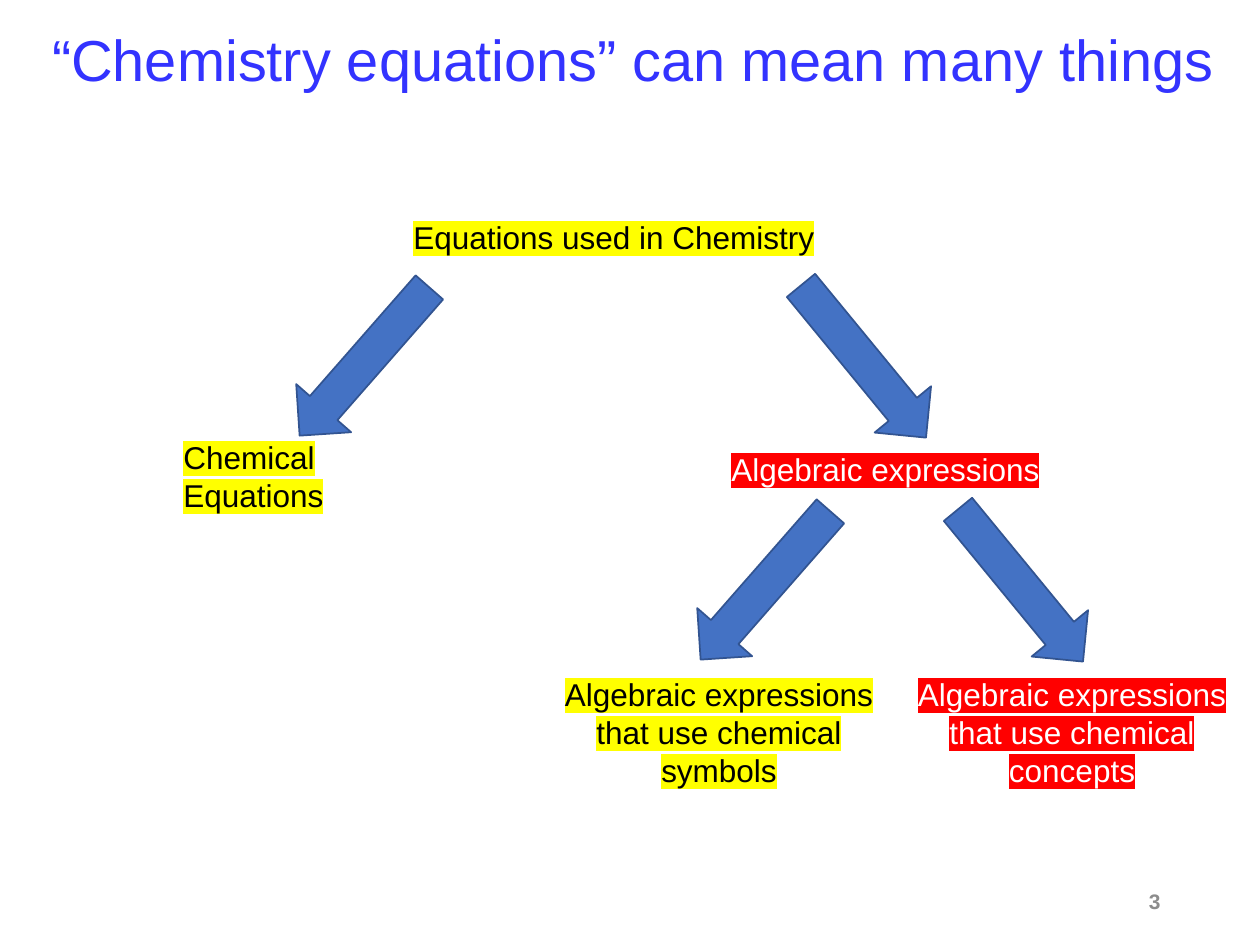
from lxml import etree
from pptx import Presentation, util as u
from pptx.dml.color import RGBColor
from pptx.enum import shapes, text
from pptx.oxml import ns

PX = 914400 / 126
COLORS = {
    "title": "3333FF", "black": "000000", "white": "FFFFFF", "yellow": "FFFF00",
    "red": "FF0000", "arrow": "4472C4", "outline": "325491", "number": "8C8C8C",
}
LEFT, CENTER, RIGHT = text.PP_ALIGN.LEFT, text.PP_ALIGN.CENTER, text.PP_ALIGN.RIGHT


def emu(*lengths):
    return [u.Emu(round(length * PX)) for length in lengths]


def add_text(box, words, size, color, align=LEFT, highlight=None):
    """Add a wrapped one-paragraph text box, with an optional highlight colour."""
    shape = slide.shapes.add_textbox(*emu(*box))
    shape.text_frame.word_wrap = True
    paragraph = shape.text_frame.paragraphs[0]
    paragraph.text = words
    paragraph.alignment = align
    font = paragraph.runs[0].font
    font.name = "Arial"
    font.size = u.Pt(size)
    font.color.rgb = RGBColor.from_string(COLORS[color])
    if highlight:
        mark = etree.Element(ns.qn("a:highlight"))
        etree.SubElement(mark, ns.qn("a:srgbClr"), val=COLORS[highlight])
        paragraph.runs[0].font._element.find(ns.qn("a:solidFill")).addnext(mark)
    return shape


presentation = Presentation()
presentation.slide_width, presentation.slide_height = emu(1260, 945)
slide = presentation.slides.add_slide(presentation.slide_layouts[6])

title = add_text((0, 25, 1266, 76), "“Chemistry equations” can mean many things", 33, "title", CENTER)
title.text_frame.vertical_anchor = text.MSO_ANCHOR.MIDDLE
title.text_frame.paragraphs[0].line_spacing = 0.9

# Tree nodes: box, words, text colour, highlight, alignment
nodes = [
    ((401, 212, 427, 50), "Equations used in Chemistry", "black", "yellow", LEFT),
    ((171, 432, 285, 89), "Chemical Equations", "black", "yellow", LEFT),
    ((719, 444, 344, 50), "Algebraic expressions", "white", "red", LEFT),
    ((547, 669, 344, 127), "Algebraic expressions that use chemical symbols", "black", "yellow", CENTER),
    ((900, 669, 344, 127), "Algebraic expressions that use chemical concepts", "white", "red", CENTER),
]
for box, words, color, highlight, align in nodes:
    add_text(box, words, 18, color, align, highlight)

# Each level branches down to the left and down to the right
for top, left_branch, right_branch in [(325, 266, 765), (549, 667, 922)]:
    for left, rotation in [(left_branch, 311.2), (right_branch, 230.6)]:
        arrow = slide.shapes.add_shape(shapes.MSO_SHAPE.LEFT_ARROW, *emu(left, top, 197, 73))
        arrow.rotation = rotation
        arrow.shadow.inherit = False
        arrow.fill.solid()
        arrow.fill.fore_color.rgb = RGBColor.from_string(COLORS["arrow"])
        arrow.line.color.rgb = RGBColor.from_string(COLORS["outline"])
        arrow.line.width = u.Pt(1)

number = add_text((890, 876, 283, 50), "3", 12, "number", RIGHT)
number.text_frame.vertical_anchor = text.MSO_ANCHOR.MIDDLE
number.text_frame.paragraphs[0].runs[0].font.bold = True

presentation.save("out.pptx")
